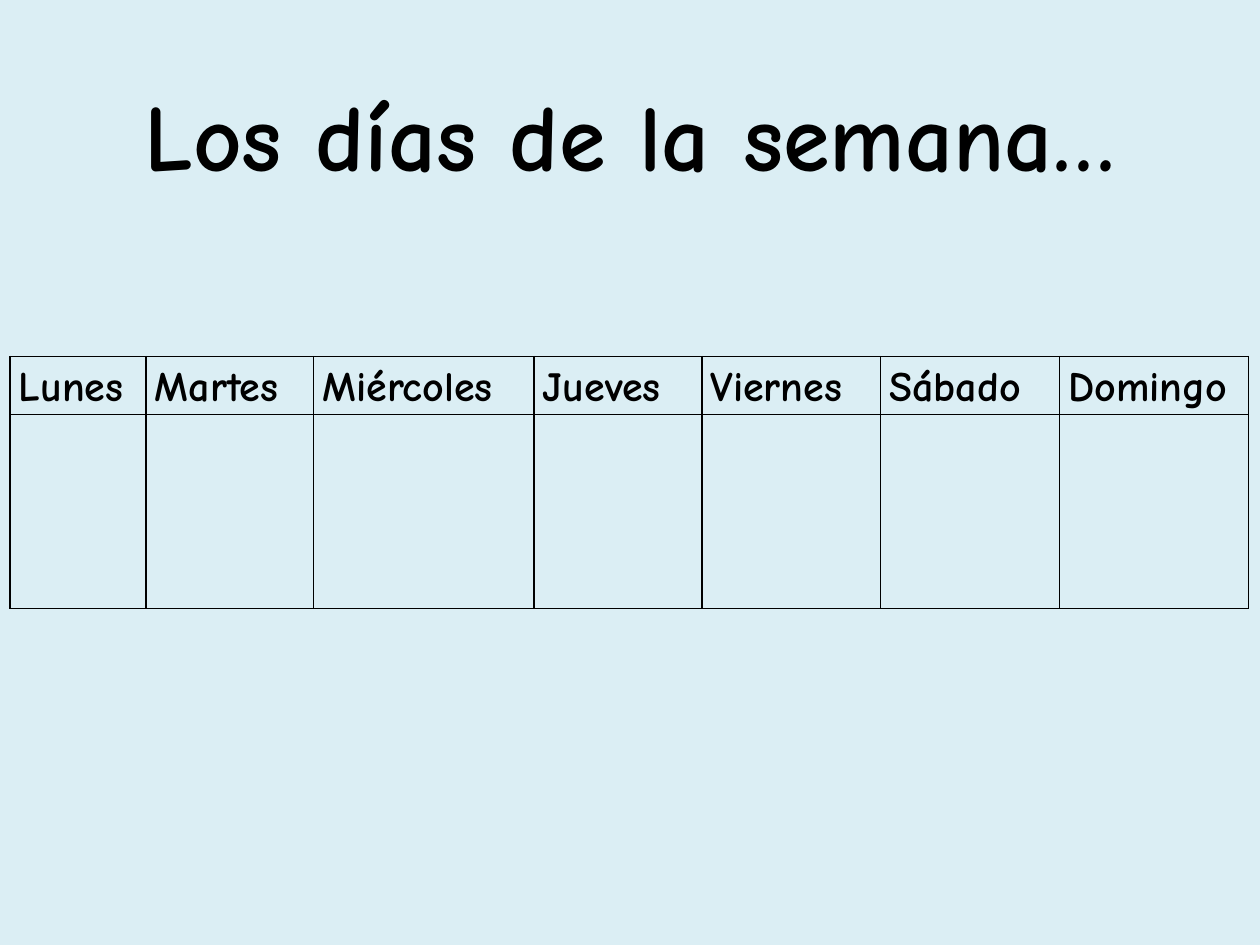
from lxml.etree import SubElement
from pptx import Presentation
from pptx.dml.color import RGBColor
from pptx.enum.text import MSO_ANCHOR, PP_ALIGN
from pptx.oxml.ns import qn
from pptx.util import Inches, Pt

TITLE = "Los días de la semana…"
DAYS = [  # name, column width
    ("Lunes", 1.08), ("Martes", 1.33), ("Miércoles", 1.75), ("Jueves", 1.33),
    ("Viernes", 1.42), ("Sábado", 1.42), ("Domingo", 1.5),
]
ROW_HEIGHTS = [0.45, 1.54]
FONT = "Comic Neue"
BLACK = RGBColor(0x00, 0x00, 0x00)
PALE_BLUE = RGBColor(0xDB, 0xEE, 0xF4)
CELL_MARGINS = {"margin_left": Inches(0.07), "margin_right": Inches(0.07),
                "margin_top": 0, "margin_bottom": 0}


def write(para, text, size):
    span = para.add_run()
    span.text = text
    span.font.color.rgb = BLACK
    for name, value in {"name": FONT, "size": Pt(size), "bold": True}.items():
        setattr(span.font, name, value)


def add_borders(cell):
    properties = cell._tc.get_or_add_tcPr()
    for side in ("a:lnL", "a:lnR", "a:lnT", "a:lnB"):
        line = SubElement(properties, qn(side), w=str(Pt(1)))
        fill = SubElement(line, qn("a:solidFill"))
        SubElement(fill, qn("a:srgbClr"), val=str(BLACK))


def add_title(page):
    box = page.shapes.add_textbox(Inches(0.5), Inches(0.3), Inches(9), Inches(1.53))
    frame = box.text_frame
    frame.word_wrap = True
    frame.vertical_anchor = MSO_ANCHOR.MIDDLE
    para = frame.paragraphs[0]
    para.alignment = PP_ALIGN.CENTER
    write(para, TITLE, 54)


def add_week_table(page):
    width = sum(column_width for _, column_width in DAYS)
    table = page.shapes.add_table(
        len(ROW_HEIGHTS), len(DAYS), Inches(0.08), Inches(2.83),
        Inches(width), Inches(sum(ROW_HEIGHTS))).table
    table.first_row = table.horz_banding = False
    for row, height in zip(table.rows, ROW_HEIGHTS):
        row.height = Inches(height)
    for cell in table.iter_cells():
        for name, value in CELL_MARGINS.items():
            setattr(cell, name, value)
        add_borders(cell)
        cell.fill.background()
    for index, (day, column_width) in enumerate(DAYS):
        table.columns[index].width = Inches(column_width)
        para = table.cell(0, index).text_frame.paragraphs[0]
        para.line_spacing = 1.15
        write(para, day, 24)


def main():
    deck = Presentation()
    deck.slide_width, deck.slide_height = Inches(10), Inches(7.5)
    page = deck.slides.add_slide(deck.slide_layouts[6])
    page.background.fill.solid()
    page.background.fill.fore_color.rgb = PALE_BLUE
    add_title(page)
    add_week_table(page)
    deck.save("out.pptx")


if __name__ == "__main__":
    main()
